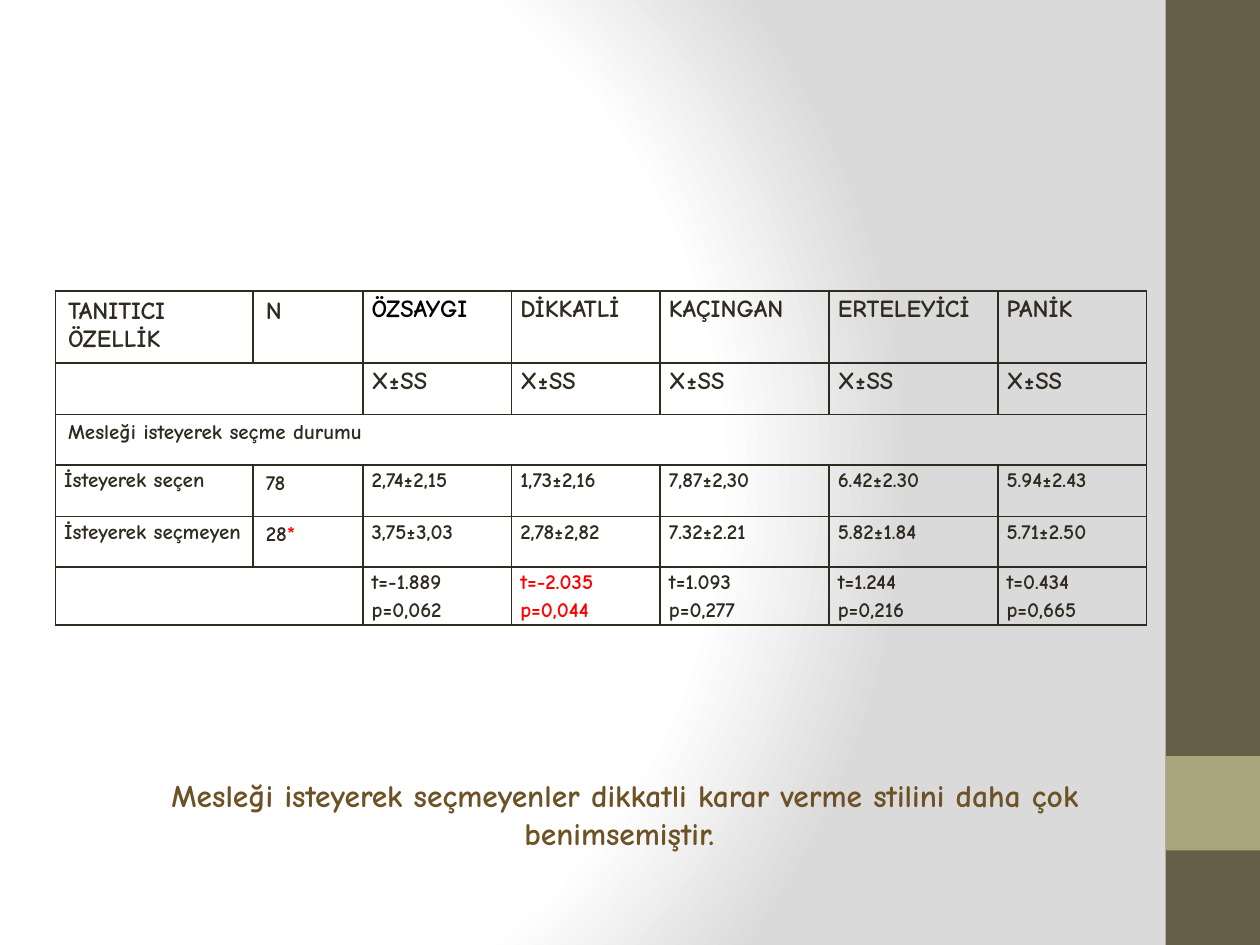
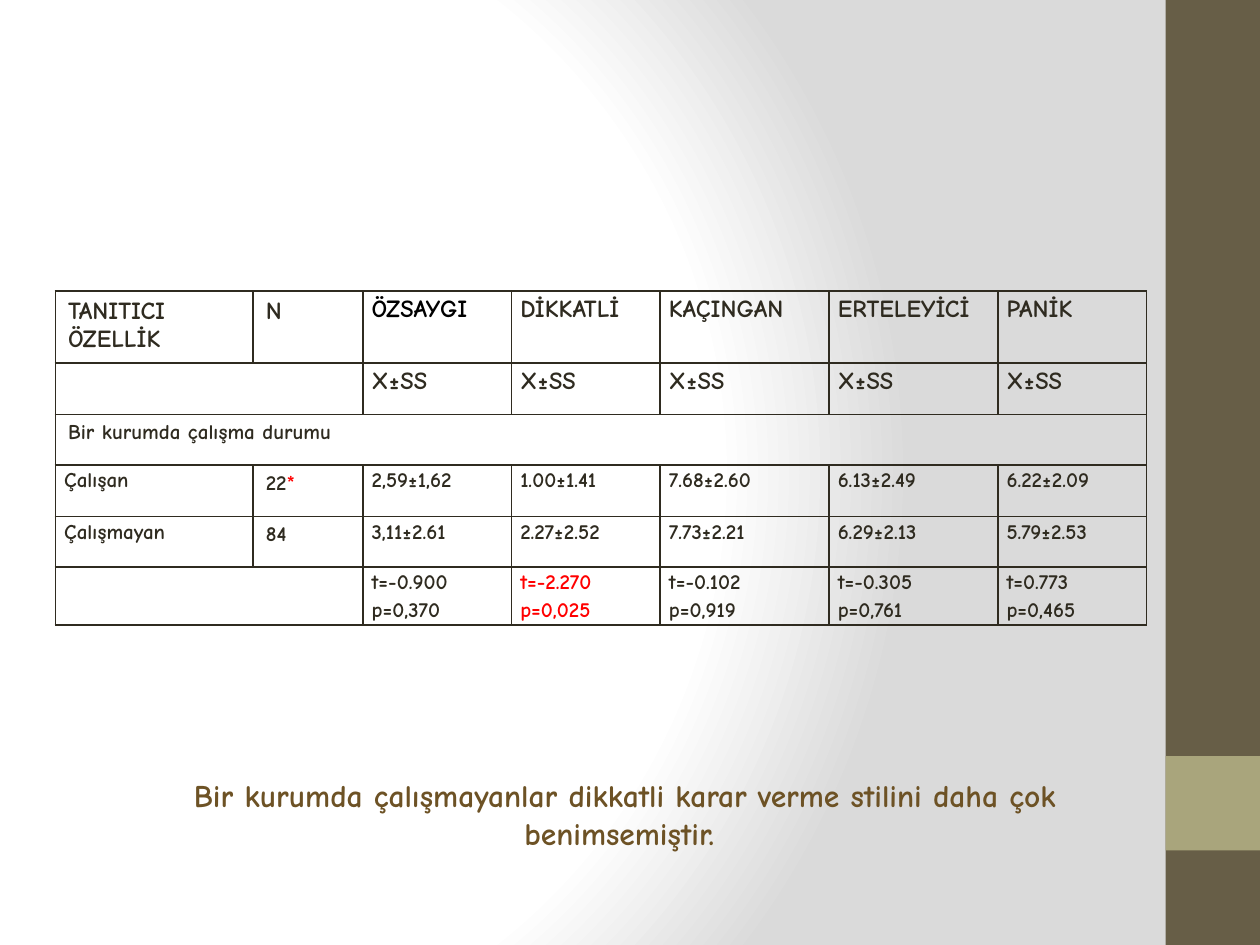
from dataclasses import dataclass

from lxml import etree
from pptx import Presentation
from pptx.dml.color import RGBColor
from pptx.enum.shapes import MSO_SHAPE
from pptx.enum.text import MSO_AUTO_SIZE, PP_ALIGN
from pptx.oxml import parse_xml
from pptx.oxml.ns import nsdecls, qn
from pptx.slide import Slide
from pptx.table import Table, _Cell
from pptx.text.text import _Paragraph
from pptx.util import Inches, Pt

RECTANGLE = MSO_SHAPE.RECTANGLE
CENTER = PP_ALIGN.CENTER
GROW = MSO_AUTO_SIZE.SHAPE_TO_FIT_TEXT

INK = RGBColor(0x2F, 0x2B, 0x20)
BLACK = RGBColor(0x00, 0x00, 0x00)
RED = RGBColor(0xFF, 0x00, 0x00)
BROWN = RGBColor(0x6D, 0x52, 0x25)
BAND = RGBColor(0x67, 0x5E, 0x47)
BAND_ACCENT = RGBColor(0xA9, 0xA5, 0x7C)
WHITE = RGBColor(0xFF, 0xFF, 0xFF)
GREY = RGBColor(0xDA, 0xDA, 0xDA)

FONT = "Comic Neue"
COLUMN_WIDTHS = (1.57, 0.87, 1.18, 1.18, 1.34, 1.34, 1.18)
ROW_HEIGHTS = (0.57, 0.41, 0.4, 0.41, 0.4, 0.46)
HEADERS = ("TANITICI\nÖZELLİK", "N", "ÖZSAYGI", "DİKKATLİ", "KAÇINGAN", "ERTELEYİCİ", "PANİK")
MEASURES = ("", "") + ("X±SS",) * 5
MERGES = ((1, 1), (2, 6), (5, 1))
SECTION_ROW = 2
TEST_ROW = 5
SIGNIFICANT_COLUMN = 3
TIGHT_MARGINS = {
    "margin_left": Inches(0.07),
    "margin_top": Inches(0),
    "margin_right": Inches(0.07),
    "margin_bottom": Inches(0),
}


@dataclass(frozen=True)
class TextStyle:
    size: int
    color: RGBColor


@dataclass(frozen=True)
class Block:
    left: float
    top: float
    width: float
    height: float
    color: RGBColor


@dataclass(frozen=True)
class Finding:
    section: str
    groups: tuple[tuple[str, ...], ...]
    tests: tuple[str, ...]
    conclusion: str


SIDE_BLOCKS = (
    Block(9.25, 0, 0.75, 7.5, BAND),
    Block(9.25, 6, 0.75, 0.75, BAND_ACCENT),
)

FINDINGS = (
    Finding(
        "Mesleği isteyerek seçme durumu",
        (
            ("İsteyerek seçen", "78", "2,74±2,15", "1,73±2,16", "7,87±2,30", "6.42±2.30", "5.94±2.43"),
            ("İsteyerek seçmeyen", "28*", "3,75±3,03", "2,78±2,82", "7.32±2.21", "5.82±1.84", "5.71±2.50"),
        ),
        ("t=-1.889 p=0,062", "t=-2.035\np=0,044", "t=1.093\np=0,277", "t=1.244\np=0,216", "t=0.434\np=0,665"),
        "Mesleği isteyerek seçmeyenler dikkatli karar verme stilini daha çok benimsemiştir. ",
    ),
    Finding(
        "Bir kurumda çalışma durumu",
        (
            ("Çalışan", "22*", "2,59±1,62", "1.00±1.41", "7.68±2.60", "6.13±2.49", "6.22±2.09"),
            ("Çalışmayan", "84", "3,11±2.61", "2.27±2.52", "7.73±2.21", "6.29±2.13", "5.79±2.53"),
        ),
        ("t=-0.900 p=0,370", "t=-2.270\np=0,025", "t=-0.102\np=0,919", "t=-0.305\np=0,761", "t=0.773\np=0,465"),
        "Bir kurumda çalışmayanlar dikkatli karar verme stilini daha çok benimsemiştir. ",
    ),
)


def add_run(paragraph: _Paragraph, text: str, style: TextStyle) -> None:
    run = paragraph.add_run()
    run.text = text
    for name, value in {"name": FONT, "size": Pt(style.size), "bold": True}.items():
        setattr(run.font, name, value)
    run.font.color.rgb = style.color


def paint_background(slide: Slide) -> None:
    slide.background.fill.solid()
    properties = slide.element.find(".//" + qn("p:bgPr"))
    stops = "".join(
        f'<a:gs pos="{position * 1000}"><a:srgbClr val="{color}"/></a:gs>'
        for position, color in ((0, WHITE), (75, WHITE), (100, GREY))
    )
    properties[0] = parse_xml(
        f'<a:gradFill {nsdecls("a")} rotWithShape="1"><a:gsLst>{stops}</a:gsLst>'
        '<a:path path="circle"><a:fillToRect l="20000" t="50000" r="100000" b="50000"/>'
        "</a:path></a:gradFill>"
    )


def add_block(slide: Slide, block: Block) -> None:
    box = map(Inches, (block.left, block.top, block.width, block.height))
    shape = slide.shapes.add_shape(RECTANGLE, *box)
    shape.shadow.inherit = False
    shape.fill.solid()
    shape.fill.fore_color.rgb = block.color
    shape.line.fill.background()


def add_conclusion(slide: Slide, text: str) -> None:
    box = map(Inches, (0.67, 6.11, 8.58, 0.71))
    frame = slide.shapes.add_textbox(*box).text_frame
    for name, value in {"word_wrap": True, "auto_size": GROW}.items():
        setattr(frame, name, value)
    paragraph = frame.paragraphs[0]
    paragraph.alignment = CENTER
    add_run(paragraph, text, TextStyle(18, BROWN))


def draw_borders(cell: _Cell) -> None:
    cell.fill.background()
    properties = cell._tc.get_or_add_tcPr()
    for index, side in enumerate(("lnL", "lnR", "lnT", "lnB")):
        line = etree.Element(qn(f"a:{side}"), w=str(Pt(1)))
        fill = etree.SubElement(line, qn("a:solidFill"))
        etree.SubElement(fill, qn("a:srgbClr"), val=str(INK))
        properties.insert(index, line)


def text_color(row: int, column: int) -> RGBColor:
    if (row, column) == (0, 2):
        return BLACK
    if (row, column) == (TEST_ROW, SIGNIFICANT_COLUMN):
        return RED
    return INK


def fill_cell(table: Table, row: int, column: int, text: str) -> None:
    cell = table.cell(row, column)
    draw_borders(cell)
    if not text:
        return
    tight = column > 1 or (column == 0 and row > SECTION_ROW)
    if tight:
        for name, value in TIGHT_MARGINS.items():
            setattr(cell, name, value)
    size = 14 if row < SECTION_ROW else 12
    style = TextStyle(size, text_color(row, column))
    frame = cell.text_frame
    for index, line in enumerate(text.split("\n")):
        paragraph = frame.add_paragraph() if index else frame.paragraphs[0]
        if tight:
            paragraph.line_spacing = 1.15
        value, star, _ = line.partition("*")
        add_run(paragraph, value, style)
        if star:
            add_run(paragraph, star, TextStyle(size, RED))


def add_finding_table(slide: Slide, finding: Finding) -> None:
    rows = (
        HEADERS,
        MEASURES,
        (finding.section,) + ("",) * 6,
        *finding.groups,
        ("", "") + finding.tests,
    )
    table = slide.shapes.add_table(
        len(rows), len(HEADERS), Inches(0.44), Inches(2.31),
        Inches(sum(COLUMN_WIDTHS)), Inches(sum(ROW_HEIGHTS)),
    ).table
    for name in ("first_row", "horz_banding"):
        setattr(table, name, False)
    for column, width in zip(table.columns, COLUMN_WIDTHS):
        column.width = Inches(width)
    for row, height in zip(table.rows, ROW_HEIGHTS):
        row.height = Inches(height)
    for row_index, texts in enumerate(rows):
        for column_index, text in enumerate(texts):
            fill_cell(table, row_index, column_index, text)
    for row_index, last_column in MERGES:
        table.cell(row_index, 0).merge(table.cell(row_index, last_column))


def main() -> None:
    presentation = Presentation()
    presentation.slide_width = Inches(10)
    presentation.slide_height = Inches(7.5)
    for finding in FINDINGS:
        slide = presentation.slides.add_slide(presentation.slide_layouts[6])
        paint_background(slide)
        for block in SIDE_BLOCKS:
            add_block(slide, block)
        add_finding_table(slide, finding)
        add_conclusion(slide, finding.conclusion)
    presentation.save("out.pptx")


if __name__ == "__main__":
    main()
